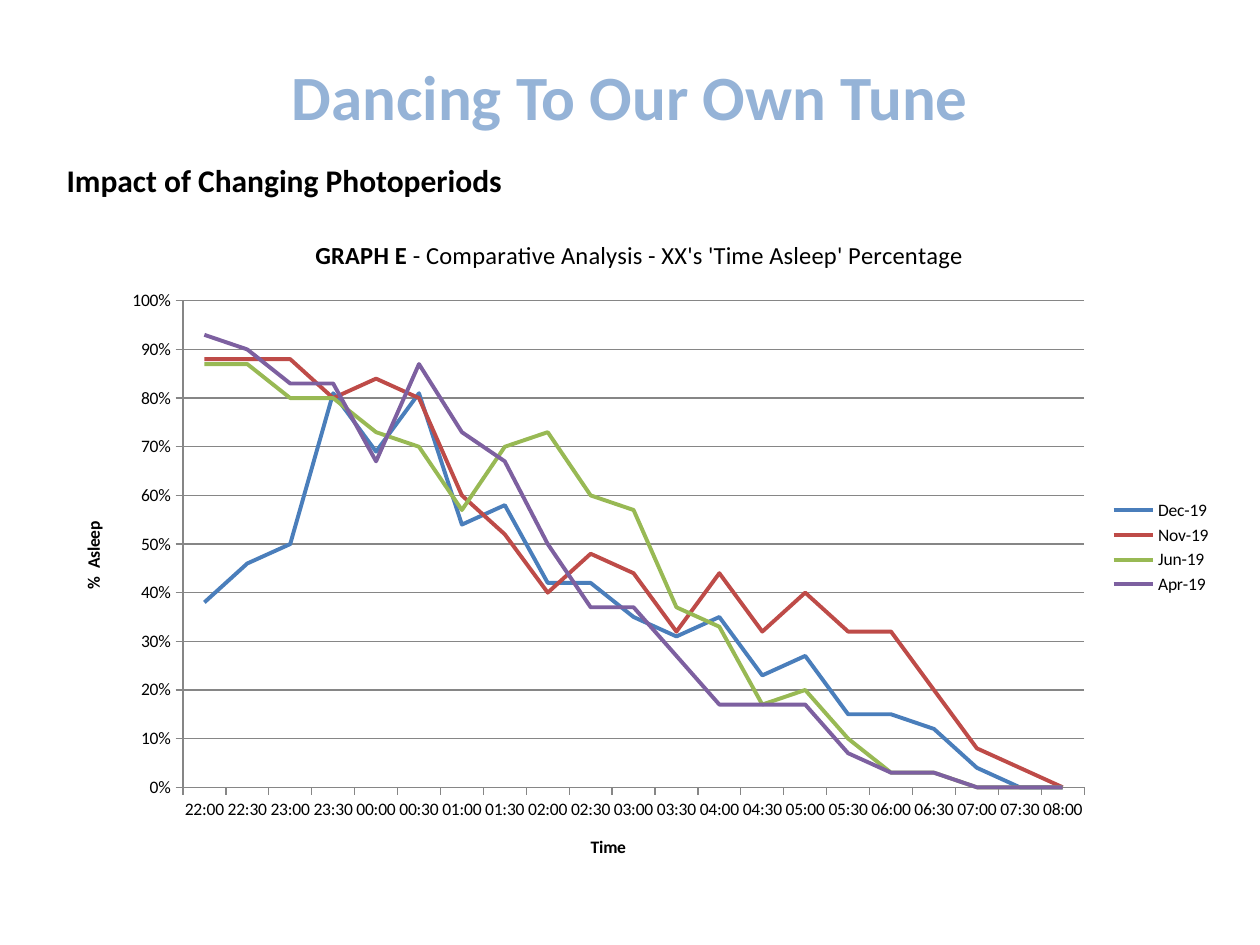
import pptx
import pptx.chart.data
import pptx.dml.color
import pptx.enum.chart
import pptx.enum.text
import pptx.oxml
import pptx.oxml.ns
import pptx.util

FONT = "Calibri"
GRID_GREY = "868686"
WIDTH, HEIGHT = 10, 7.5
TIMES = [f"{(22 + i // 2) % 24:02d}:{i % 2 * 30:02d}" for i in range(21)]
MONTHS = {
    "Dec-19": ("4A7EBB", [38, 46, 50, 81, 69, 81, 54, 58, 42, 42, 35,
                          31, 35, 23, 27, 15, 15, 12, 4, 0, 0]),
    "Nov-19": ("BE4B48", [88, 88, 88, 80, 84, 80, 60, 52, 40, 48, 44,
                          32, 44, 32, 40, 32, 32, 20, 8, 4, 0]),
    "Jun-19": ("98B954", [87, 87, 80, 80, 73, 70, 57, 70, 73, 60, 57,
                          37, 33, 17, 20, 10, 3, 3, 0, 0, 0]),
    "Apr-19": ("7D60A0", [93, 90, 83, 83, 67, 87, 73, 67, 50, 37, 37,
                          27, 17, 17, 17, 7, 3, 3, 0, 0, 0]),
}


def rgb(value):
    return pptx.dml.color.RGBColor.from_string(value)


def box(left, top, width, height):
    return [pptx.util.Inches(v) for v in (left, top, width, height)]


def write(frame, text, size, bold=False, color="000000", align=None):
    """Append a formatted run to the first paragraph of a text frame."""
    paragraph = frame.paragraphs[0]
    if align is not None:
        paragraph.alignment = align
    run = paragraph.add_run()
    run.text = text
    run.font.name = FONT
    run.font.size = pptx.util.Pt(size)
    run.font.bold = bold
    run.font.color.rgb = rgb(color)


def add_heading(slide):
    title = slide.shapes.title
    title.left, title.top, title.width, title.height = box(0, 0.13, WIDTH, 1.25)
    title.text_frame.vertical_anchor = pptx.enum.text.MSO_ANCHOR.MIDDLE
    write(title.text_frame, "Dancing To Our Own Tune", 36, bold=True,
          color="95B3D7", align=pptx.enum.text.PP_ALIGN.CENTER)


def add_subheading(slide):
    subheading = slide.shapes.add_textbox(*box(0.43, 1.23, 4.02, 0.4)).text_frame
    subheading.word_wrap = True
    write(subheading, "Impact of Changing Photoperiods", 18, bold=True)


def place_plot(chart, **shares):
    """Fix the inner plot area as shares of the chart's size."""
    area = chart._chartSpace.chart.plotArea
    for old in area.findall(pptx.oxml.ns.qn("c:layout")):
        area.remove(old)
    sides = "".join(f'<c:{side}Mode val="edge"/>' for side in "xy")
    sides += "".join(f'<c:{side} val="{share}"/>' for side, share in shares.items())
    area.insert(0, pptx.oxml.parse_xml(
        f'<c:layout {pptx.oxml.ns.nsdecls("c")}><c:manualLayout>'
        f'<c:layoutTarget val="inner"/>{sides}</c:manualLayout></c:layout>'))


def style_axis(axis, title):
    write(axis.axis_title.text_frame, title, 10, bold=True)
    axis.major_tick_mark = pptx.enum.chart.XL_TICK_MARK.OUTSIDE
    axis.format.line.color.rgb = rgb(GRID_GREY)
    axis.tick_labels.font.size = pptx.util.Pt(10)


def add_sleep_chart(slide):
    data = pptx.chart.data.CategoryChartData(number_format="0%")
    data.categories = TIMES
    for month, (_, percents) in MONTHS.items():
        data.add_series(month, [percent / 100 for percent in percents])
    chart = slide.shapes.add_chart(pptx.enum.chart.XL_CHART_TYPE.LINE,
                                   *box(0.43, 1.7, 9.29, 5.29), data).chart
    chart.font.name = FONT
    chart.font.size = pptx.util.Pt(10)
    chart.font.color.rgb = rgb("000000")

    heading = chart.chart_title.text_frame
    write(heading, "GRAPH E", 14, bold=True)
    write(heading, " - Comparative Analysis - XX's 'Time Asleep' Percentage", 14)
    chart.chart_title.include_in_layout = False
    chart.has_legend = True
    chart.legend.position = pptx.enum.chart.XL_LEGEND_POSITION.RIGHT
    chart.legend.include_in_layout = False

    style_axis(chart.category_axis, "Time")
    asleep = chart.value_axis
    style_axis(asleep, "%  Asleep")
    asleep.minimum_scale, asleep.maximum_scale, asleep.major_unit = 0, 1, 0.1
    asleep.major_gridlines.format.line.color.rgb = rgb(GRID_GREY)
    asleep.tick_labels.number_format = "0%"
    asleep.tick_labels.number_format_is_linked = False

    for series, (color, _) in zip(chart.plots[0].series, MONTHS.values()):
        series.smooth = False
        series.marker.style = pptx.enum.chart.XL_MARKER_STYLE.NONE
        series.format.line.color.rgb = rgb(color)
        series.format.line.width = pptx.util.Pt(2.25)
    place_plot(chart, x=0.11, y=0.13, w=0.77, h=0.73)


def main():
    deck = pptx.Presentation()
    deck.slide_width = pptx.util.Inches(WIDTH)
    deck.slide_height = pptx.util.Inches(HEIGHT)
    slide = deck.slides.add_slide(deck.slide_layouts.get_by_name("Title Only"))
    add_heading(slide)
    add_sleep_chart(slide)
    add_subheading(slide)
    deck.save("out.pptx")


if __name__ == "__main__":
    main()
